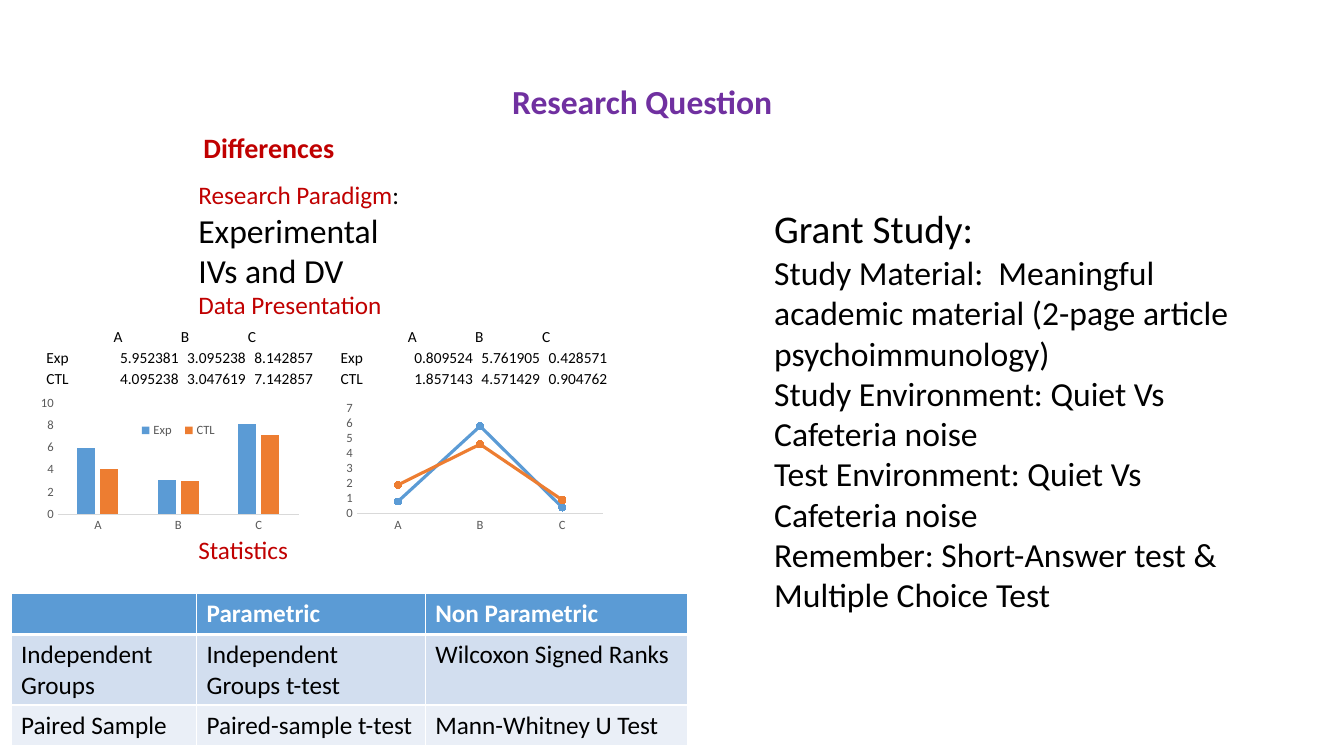
from pptx import Presentation
from pptx.chart.data import CategoryChartData
from pptx.dml.color import RGBColor
from pptx.enum.chart import XL_CHART_TYPE as ChartType, XL_LEGEND_POSITION as LegendPosition
from pptx.enum.chart import XL_MARKER_STYLE as Marker, XL_TICK_MARK as Tick
from pptx.enum.text import MSO_ANCHOR as Anchor, MSO_AUTO_SIZE as AutoSize, PP_ALIGN as Align
from pptx.oxml import parse_xml
from pptx.oxml.ns import nsdecls
from pptx.util import Pt

COLORS = {
    "black": "000000", "white": "FFFFFF", "purple": "7030A0", "red": "C00000",
    "blue": "5B9BD5", "orange": "ED7D31", "label": "595959", "axis": "D9D9D9",
    "band": "D2DEEF", "light": "EAEFF7",
}
FONT = "Calibri"
SERIES_COLORS = ("blue", "orange")


def rgb(color):
    return RGBColor.from_string(COLORS[color])


def style_font(font, size=18, color="black", bold=False):
    font.name, font.size, font.bold = FONT, Pt(size), bold
    font.color.rgb = rgb(color)


def write(frame, paragraphs, align=Align.LEFT, **font_format):
    for index, parts in enumerate(paragraphs):
        paragraph = frame.paragraphs[0] if index == 0 else frame.add_paragraph()
        paragraph.alignment = align
        paragraph.space_before = Pt(0)
        for text, changes in parts:
            run = paragraph.add_run()
            run.text = text
            style_font(run.font, **{**font_format, **changes})


def manual_layout(x, y, w, h, inner=False):
    target = '<c:layoutTarget val="inner"/>' if inner else ""
    modes = '<c:xMode val="edge"/><c:yMode val="edge"/>'
    sizes = "".join(f'<c:{key} val="{value}"/>' for key, value in zip("xywh", (x, y, w, h)))
    return parse_xml(f'<c:layout {nsdecls("c")}><c:manualLayout>{target}{modes}{sizes}'
                     "</c:manualLayout></c:layout>")


class SlideBuilder:
    def __init__(self, slide):
        self.slide = slide

    def box(self, left, top, width, height):
        return [Pt(length) for length in (left, top, width, height)]

    def placeholder(self, holder, place, paragraphs, wrap=True, **font_format):
        holder.left, holder.top, holder.width, holder.height = self.box(*place)
        frame = holder.text_frame
        frame.word_wrap, frame.vertical_anchor = wrap, Anchor.TOP
        frame.auto_size = AutoSize.SHAPE_TO_FIT_TEXT
        write(frame, paragraphs, **font_format)
        for paragraph in frame.paragraphs:
            properties = paragraph._p.get_or_add_pPr()
            properties.set("marL", "0")
            properties.set("indent", "0")
            properties.append(parse_xml(f'<a:buNone {nsdecls("a")}/>'))

    def label(self, place, paragraphs, **font_format):
        frame = self.slide.shapes.add_textbox(*self.box(*place)).text_frame
        frame.word_wrap = False
        frame.auto_size = AutoSize.SHAPE_TO_FIT_TEXT
        write(frame, paragraphs, **font_format)

    def chart(self, kind, place, values, top_value, step, plot_layout, legend_layout=None):
        data = CategoryChartData()
        data.categories = ["A", "B", "C"]
        for name, numbers in values.items():
            data.add_series(name, numbers)
        chart = self.slide.shapes.add_chart(kind, *self.box(*place), data).chart
        chart.has_title = False
        style_font(chart.font, size=10)
        plot = chart.plots[0]
        plot.vary_by_categories = False
        for axis in (chart.category_axis, chart.value_axis):
            axis.has_major_gridlines = False
            axis.major_tick_mark = axis.minor_tick_mark = Tick.NONE
            style_font(axis.tick_labels.font, size=9, color="label")
        chart.category_axis.format.line.color.rgb = rgb("axis")
        chart.category_axis.format.line.width = Pt(0.75)
        chart.value_axis.format.line.fill.background()
        chart.value_axis.minimum_scale, chart.value_axis.maximum_scale = 0, top_value
        chart.value_axis.major_unit = step
        for series, color in zip(plot.series, SERIES_COLORS):
            if kind == ChartType.LINE_MARKERS:
                series.smooth = False
                series.format.line.color.rgb = rgb(color)
                series.format.line.width = Pt(2.25)
                series.marker.style, series.marker.size = Marker.CIRCLE, 5
                series.marker.format.fill.solid()
                series.marker.format.fill.fore_color.rgb = rgb(color)
                series.marker.format.line.color.rgb = rgb(color)
            else:
                plot.gap_width, plot.overlap = 219, -27
                series.format.fill.solid()
                series.format.fill.fore_color.rgb = rgb(color)
        plot_area = chart.element.xpath(".//c:plotArea")[0]
        for automatic in plot_area.xpath("./c:layout"):
            plot_area.remove(automatic)
        plot_area.insert(0, manual_layout(*plot_layout, inner=True))
        chart.has_legend = legend_layout is not None
        if legend_layout:
            chart.legend.position = LegendPosition.BOTTOM
            chart.legend.include_in_layout = True
            style_font(chart.legend.font, size=9, color="label")
            legend = chart.element.xpath(".//c:legend")[0]
            for automatic in legend.xpath("./c:layout"):
                legend.remove(automatic)
            legend.xpath("./c:legendPos")[0].addnext(manual_layout(*legend_layout))

    def table(self, left, top, widths, heights, rows, format_cell):
        place = self.box(left, top, sum(widths), sum(heights))
        table = self.slide.shapes.add_table(len(rows), len(widths), *place).table
        table.first_row = table.horz_banding = False
        for column, width in zip(table.columns, widths):
            column.width = Pt(width)
        for r, texts in enumerate(rows):
            table.rows[r].height = Pt(heights[r])
            for c, text in enumerate(texts):
                format_cell(table.cell(r, c), text, r, c)

    def data_cell(self, cell, text, row, column):
        cell.fill.background()
        cell.vertical_anchor = Anchor.BOTTOM
        cell.margin_left = cell.margin_right = cell.margin_top = Pt(0.75)
        cell.margin_bottom = 0
        if text:
            align = Align.RIGHT if row and column else Align.LEFT
            write(cell.text_frame, [[(text, {})]], align=align, size=11)
        else:
            cell.text_frame.paragraphs[0]._p.append(
                parse_xml(f'<a:endParaRPr {nsdecls("a")} sz="1100"/>'))

    def statistics_cell(self, cell, text, row, column):
        cell.fill.solid()
        cell.fill.fore_color.rgb = rgb(("blue", "band", "light")[row])
        if text:
            write(cell.text_frame, [[(text, {})]], bold=row == 0,
                  color="black" if row else "white")
        heavy = {"B": row == 0, "T": row == 1}
        for index, side in enumerate("LRTB"):
            width = Pt(3 if heavy.get(side) else 1)
            cell._tc.get_or_add_tcPr().insert(index, parse_xml(
                f'<a:ln{side} {nsdecls("a")} w="{width}"><a:solidFill>'
                f'<a:srgbClr val="{COLORS["white"]}"/></a:solidFill></a:ln{side}>'))


def main():
    deck = Presentation()
    deck.slide_width, deck.slide_height = Pt(960), Pt(540)
    builder = SlideBuilder(deck.slides.add_slide(deck.slide_layouts[1]))
    title, body = builder.slide.placeholders

    builder.placeholder(title, (358.6, 54, 202.3, 36), [[("Research Question", {})]],
                        wrap=False, size=24, color="purple", bold=True)
    builder.label((138.2, 90, 109.4, 31.7), [[("Differences", {})]],
                  size=20, color="red", bold=True)
    for heading, top, width in (("Data Presentation", 203, 147), ("Statistics", 378, 79.2)):
        builder.label((134.6, top, width, 28.8), [[(heading, {})]], color="red")
    builder.label((134.6, 124.6, 159.8, 87.1), [
        [("Research Paradigm", {"size": 18, "color": "red"}), (":", {"size": 18})],
        [("Experimental", {})],
        [("IVs and DV", {})],
    ], size=24)

    builder.chart(ChartType.COLUMN_CLUSTERED, (25.9, 280, 191.5, 101.5),
                  {"Exp": (6, 3.1, 8.1), "CTL": (4.1, 3, 7.1)}, 10, 2,
                  (0.08, 0.08, 0.9, 0.78), (0.36, 0.2, 0.34, 0.14))
    builder.chart(ChartType.LINE_MARKERS, (243.4, 283.7, 191.5, 97.9),
                  {"Exp": (0.8, 5.8, 0.4), "CTL": (1.9, 4.6, 0.9)}, 7, 1,
                  (0.06, 0.08, 0.92, 0.77))

    measurements = (
        (32.4, ("5.952381", "3.095238", "8.142857"), ("4.095238", "3.047619", "7.142857")),
        (242.6, ("0.809524", "5.761905", "0.428571"), ("1.857143", "4.571429", "0.904762")),
    )
    for left, experimental, control in measurements:
        rows = [("", "A", "B", "C"), ("Exp", *experimental), ("CTL", *control)]
        builder.table(left, 232.6, [48] * 4, [15] * 3, rows, builder.data_cell)

    builder.table(7.9, 424, [132.5, 163.4, 187.5], [29.2, 50.4, 29.2], [
        ("", "Parametric", "Non Parametric"),
        ("Independent Groups", "Independent Groups t-test", "Wilcoxon Signed Ranks"),
        ("Paired Sample", "Paired-sample t-test", "Mann-Whitney U Test"),
    ], builder.statistics_cell)

    builder.placeholder(body, (545.8, 142.6, 346.3, 303.1), [
        [("Grant Study:", {"size": 28})],
        [("Study Material:  Meaningful academic material (2-page article psychoimmunology)", {})],
        [("Study Environment: Quiet Vs Cafeteria noise", {})],
        [("Test Environment: Quiet Vs Cafeteria noise", {})],
        [("Remember: Short-Answer test & Multiple Choice Test", {})],
    ], size=24)

    deck.save("out.pptx")


if __name__ == "__main__":
    main()
